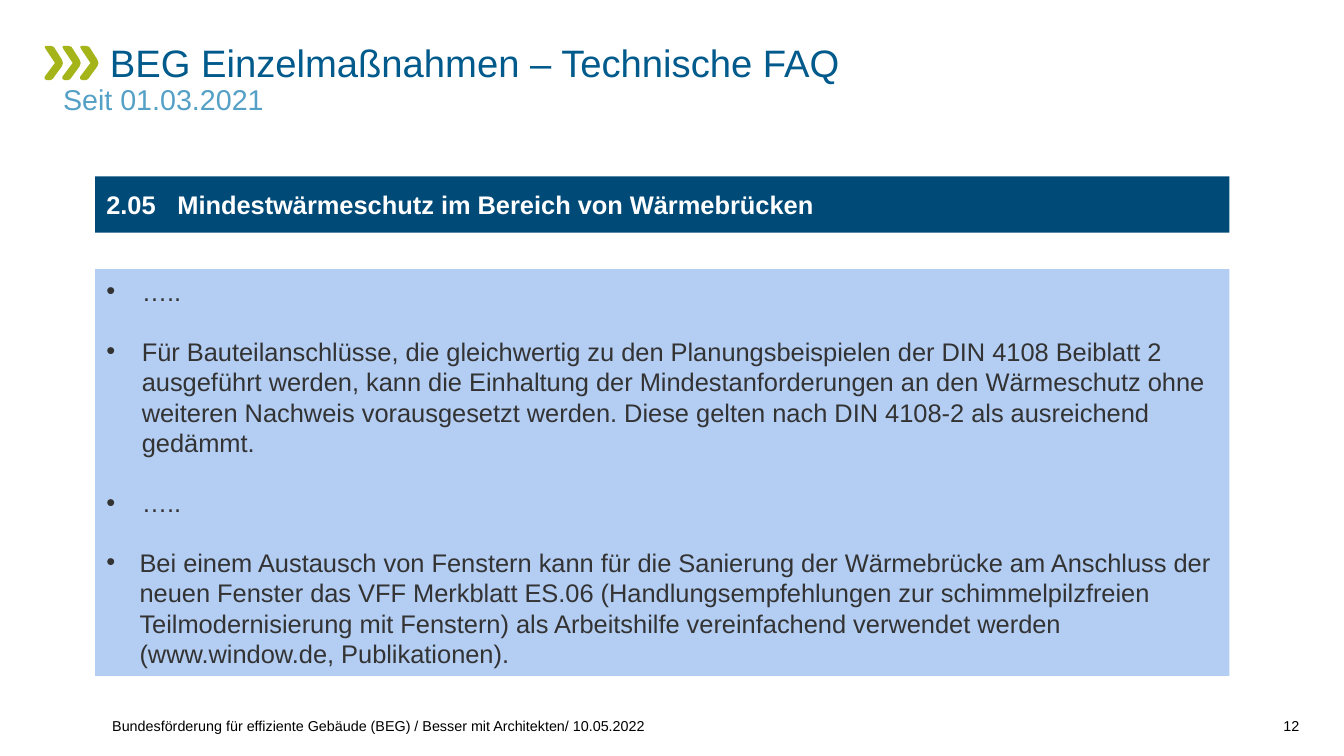
from lxml.etree import SubElement
from pptx import Presentation
from pptx.dml.color import RGBColor
from pptx.enum.shapes import MSO_SHAPE
from pptx.enum.text import MSO_ANCHOR, PP_ALIGN
from pptx.oxml.ns import qn
from pptx.util import Inches, Pt

COLORS = {
    "chevron": "A4B419", "title": "005A8C", "subtitle": "55A0C6",
    "heading": "004A78", "panel": "B3CDF3", "body": "333333",
    "white": "FFFFFF", "black": "000000",
}
CHEVRON = [
    (0.02, 0), (0.01, 0), (0, 0.01), (0.01, 0.03), (0.09, 0.15), (0, 0.27),
    (0, 0.29), (0.02, 0.3), (0.05, 0.3), (0.07, 0.29), (0.15, 0.18),
    (0.16, 0.15), (0.15, 0.12), (0.08, 0.01), (0.05, 0),
]
FAQ = [
    ("•", 0.31, "….."),
    ("•", 0.31, "Für Bauteilanschlüsse, die gleichwertig zu den Planungsbeispielen der "
     "DIN 4108 Beiblatt 2 ausgeführt werden, kann die Einhaltung der "
     "Mindestanforderungen an den Wärmeschutz ohne weiteren Nachweis vorausgesetzt "
     "werden. Diese gelten nach DIN 4108-2 als ausreichend gedämmt."),
    ("•", 0.31, "….."),
    ("•", 0.29, "Bei einem Austausch von Fenstern kann für die Sanierung der Wärmebrücke "
     "am Anschluss der neuen Fenster das VFF Merkblatt ES.06 (Handlungsempfehlungen "
     "zur schimmelpilzfreien Teilmodernisierung mit Fenstern) als Arbeitshilfe "
     "vereinfachend verwendet werden"),
    (None, 0.29, "(www.window.de, Publikationen)."),
]


class FaqSlide:
    """Draws styled elements on one slide."""

    def __init__(self, slide, font="Arial"):
        self.slide = slide
        self.font = font

    def paint(self, shape, color):
        shape.shadow.inherit = False
        shape.fill.solid()
        shape.fill.fore_color.rgb = RGBColor.from_string(COLORS[color])
        shape.line.fill.background()

    def style(self, paragraph, size, color, bold=False):
        paragraph.font.name = self.font
        paragraph.font.size = Pt(size)
        paragraph.font.bold = bold
        paragraph.font.color.rgb = RGBColor.from_string(COLORS[color])

    def chevron(self, left, top):
        points = [(Inches(left + x), Inches(top + y)) for x, y in CHEVRON]
        builder = self.slide.shapes.build_freeform(*points[0])
        builder.add_line_segments(points[1:], close=True)
        self.paint(builder.convert_to_shape(), "chevron")

    def label(self, box, text, size, color, anchor=MSO_ANCHOR.TOP,
              align=PP_ALIGN.LEFT, spacing=1.0, indent=0):
        frame = self.slide.shapes.add_textbox(*map(Inches, box)).text_frame
        frame.word_wrap = True
        frame.vertical_anchor = anchor
        frame.margin_left = frame.margin_right = 0
        frame.margin_top = frame.margin_bottom = 0
        line = frame.paragraphs[0]
        line.text = text
        line.alignment = align
        line.line_spacing = spacing
        line._p.get_or_add_pPr().set("indent", str(Inches(indent)))
        self.style(line, size, color)

    def panel(self, box, color):
        panel = self.slide.shapes.add_shape(MSO_SHAPE.ROUNDED_RECTANGLE, *map(Inches, box))
        panel.adjustments[0] = 0
        self.paint(panel, color)
        panel.text_frame.word_wrap = True
        panel.text_frame.vertical_anchor = MSO_ANCHOR.MIDDLE
        return panel.text_frame

    def heading(self, box, number, topic, tab):
        line = self.panel(box, "heading").paragraphs[0]
        line.text = f"{number}\t{topic}"
        line.alignment = PP_ALIGN.LEFT
        stops = SubElement(line._p.get_or_add_pPr(), qn("a:tabLst"))
        SubElement(stops, qn("a:tab"), pos=str(Inches(tab)), algn="l")
        self.style(line, 16, "white", bold=True)

    def bullets(self, box, items, gap):
        frame = self.panel(box, "panel")
        for index, (bullet, indent, text) in enumerate(items):
            item = frame.add_paragraph() if index else frame.paragraphs[0]
            item.text = text
            item.alignment = PP_ALIGN.LEFT
            if index and bullet:
                item.space_before = Pt(gap)
            properties = item._p.get_or_add_pPr()
            properties.set("marL", str(Inches(indent)))
            properties.set("indent", str(Inches(-indent if bullet else 0)))
            if bullet:
                SubElement(properties, qn("a:buFont"), typeface=self.font)
                SubElement(properties, qn("a:buChar"), char=bullet)
            self.style(item, 16, "body")


def main():
    deck = Presentation()
    deck.slide_width, deck.slide_height = Inches(11.73), Inches(6.6)
    faq = FaqSlide(deck.slides.add_slide(deck.slide_layouts[6]))
    for column in range(3):
        faq.chevron(0.39 + column * 0.155, 0.4)
    faq.label((0.55, 0.37, 10.79, 0.41), "BEG Einzelmaßnahmen – Technische FAQ",
              24, "title", spacing=0.95, indent=0.41)
    faq.label((0.55, 0.74, 10.79, 0.36), "Seit 01.03.2021", 18, "subtitle", spacing=0.95)
    faq.heading((0.83, 1.54, 9.9, 0.49), "2.05",
                "Mindestwärmeschutz im Bereich von Wärmebrücken", tab=0.62)
    faq.bullets((0.83, 2.35, 9.9, 3.55), FAQ, gap=18.4)
    faq.label((0.98, 6.13, 9.9, 0.28),
              "Bundesförderung für effiziente Gebäude (BEG) / Besser mit Architekten/ 10.05.2022",
              9, "black", anchor=MSO_ANCHOR.BOTTOM)
    faq.label((10.93, 6.13, 0.41, 0.28), "12", 9, "black",
              anchor=MSO_ANCHOR.BOTTOM, align=PP_ALIGN.RIGHT)
    deck.save("out.pptx")


if __name__ == "__main__":
    main()
